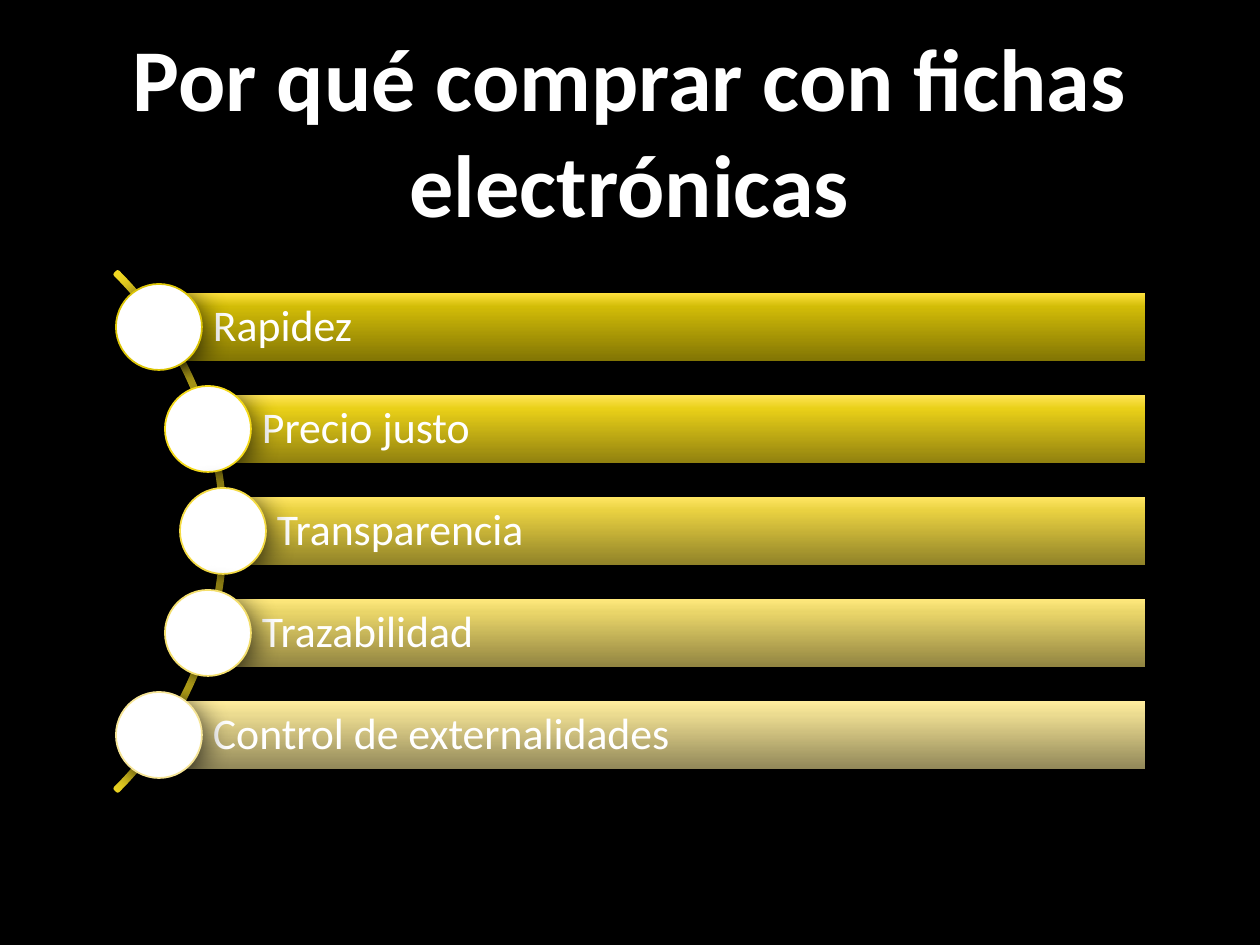
"""Build a slide listing the reasons to buy with electronic forms."""
from dataclasses import dataclass

from lxml import etree
from pptx import Presentation
from pptx import util as u
from pptx.dml.color import RGBColor
from pptx.enum import shapes, text
from pptx.oxml import ns

PX = u.Inches(10) // 1260
COLORS = {"bg": "000000", "text": "FFFFFF", "arc": "F2D923", "shadow": "000000"}
BAR_RIGHT, BAR_TOP, BAR_H, PITCH, DOT = 1145, 293, 68, 102, 86
STOPS = (0, 80000, 100000)


@dataclass
class Reason:
    label: str
    left: int
    gradient: tuple[str, str, str]
    outline: str


REASONS = [
    Reason("Rapidez", 159, ("827504", "D2BC07", "FFE23E"), "DCC507"),
    Reason("Precio justo", 208, ("91810F", "E9D018", "FFE456"), "F4D919"),
    Reason("Transparencia", 223, ("908228", "E9D141", "FFE663"), "F4DB44"),
    Reason("Trazabilidad", 208, ("918441", "E9D569", "FFE97D"), "F4DF6E"),
    Reason("Control de externalidades", 159, ("928859", "EBDB90", "FFED9D"), "F6E597"),
]


def rgb(value: str) -> RGBColor:
    return RGBColor.from_string(value)


def set_all(obj, values: dict) -> None:
    for name, value in values.items():
        setattr(obj, name, value)


def add_node(parent, tag: str, **attrs):
    return etree.SubElement(parent, ns.qn(tag), {k: str(v) for k, v in attrs.items()})


def add_color(parent, value: str):
    return add_node(parent, "a:srgbClr", val=value)


def add_shape(s, kind, left: int, top: int, width: int, height: int):
    sp = s.shapes.add_shape(kind, *(n * PX for n in (left, top, width, height)))
    sp.shadow.inherit = False
    return sp


def add_shadow(sp) -> None:
    effects = sp.element.spPr.find(ns.qn("a:effectLst"))
    shadow = add_node(effects, "a:outerShdw", blurRad=u.Pt(18), dist=u.Pt(3),
                      dir=5400000, rotWithShape=0)
    add_node(add_color(shadow, COLORS["shadow"]), "a:alpha", val=80000)


def set_line(sp, color: str, width: float) -> None:
    sp.line.color.rgb = rgb(color)
    sp.line.width = u.Pt(width)


def set_gradient(sp, colors: tuple[str, str, str]) -> None:
    sp.fill.gradient()
    sp.fill.gradient_angle = 90
    stops = sp.element.spPr.find(".//" + ns.qn("a:gsLst"))
    for stop in list(stops):
        stops.remove(stop)
    for pos, color in zip(STOPS, colors):
        add_color(add_node(stops, "a:gs", pos=pos), color)


def write(sp, words: str, size: float, bold: bool, align, insets: dict) -> None:
    tf = sp.text_frame
    set_all(tf, {"word_wrap": True, "auto_size": text.MSO_AUTO_SIZE.NONE,
                 "vertical_anchor": text.MSO_ANCHOR.MIDDLE, **insets})
    p = tf.paragraphs[0]
    p.alignment = align
    r = p.add_run()
    r.text = words
    set_all(r.font, {"name": "Calibri", "size": u.Pt(size), "bold": bold})
    r.font.color.rgb = rgb(COLORS["text"])


def add_title(s, words: str) -> None:
    sp = s.shapes.title
    set_all(sp, {"left": 107 * PX, "top": 15 * PX,
                 "width": 1045 * PX, "height": 228 * PX})
    write(sp, words, 50.4, True, text.PP_ALIGN.CENTER, {})


def add_arc(s) -> None:
    sp = add_shape(s, shapes.MSO_SHAPE.BLOCK_ARC, -508, 165, 733, 733)
    for i, value in enumerate((189, 27, 0.004)):
        sp.adjustments[i] = value
    sp.fill.background()
    set_line(sp, COLORS["arc"], 2.5)


def add_reason(s, reason: Reason, top: int) -> None:
    bar = add_shape(s, shapes.MSO_SHAPE.RECTANGLE, reason.left, top,
                    BAR_RIGHT - reason.left, BAR_H)
    set_gradient(bar, reason.gradient)
    bar.line.fill.background()
    add_shadow(bar)
    write(bar, reason.label, 25, False, text.PP_ALIGN.LEFT,
          {"margin_left": 54 * PX, "margin_right": 9 * PX,
           "margin_top": 9 * PX, "margin_bottom": 9 * PX})
    bar.text_frame.paragraphs[0].line_spacing = 0.9

    dot = add_shape(s, shapes.MSO_SHAPE.OVAL, reason.left - DOT // 2,
                    top - (DOT - BAR_H) // 2, DOT, DOT)
    dot.fill.solid()
    dot.fill.fore_color.rgb = rgb(COLORS["text"])
    set_line(dot, reason.outline, 1)
    add_shadow(dot)


def main() -> None:
    prs = Presentation()
    set_all(prs, {"slide_width": u.Inches(10), "slide_height": u.Inches(7.5)})
    s = prs.slides.add_slide(prs.slide_layouts[5])
    s.background.fill.solid()
    s.background.fill.fore_color.rgb = rgb(COLORS["bg"])
    add_title(s, "Por qué comprar con fichas electrónicas")
    add_arc(s)
    for i, reason in enumerate(REASONS):
        add_reason(s, reason, BAR_TOP + i * PITCH)
    prs.save("out.pptx")


if __name__ == "__main__":
    main()
